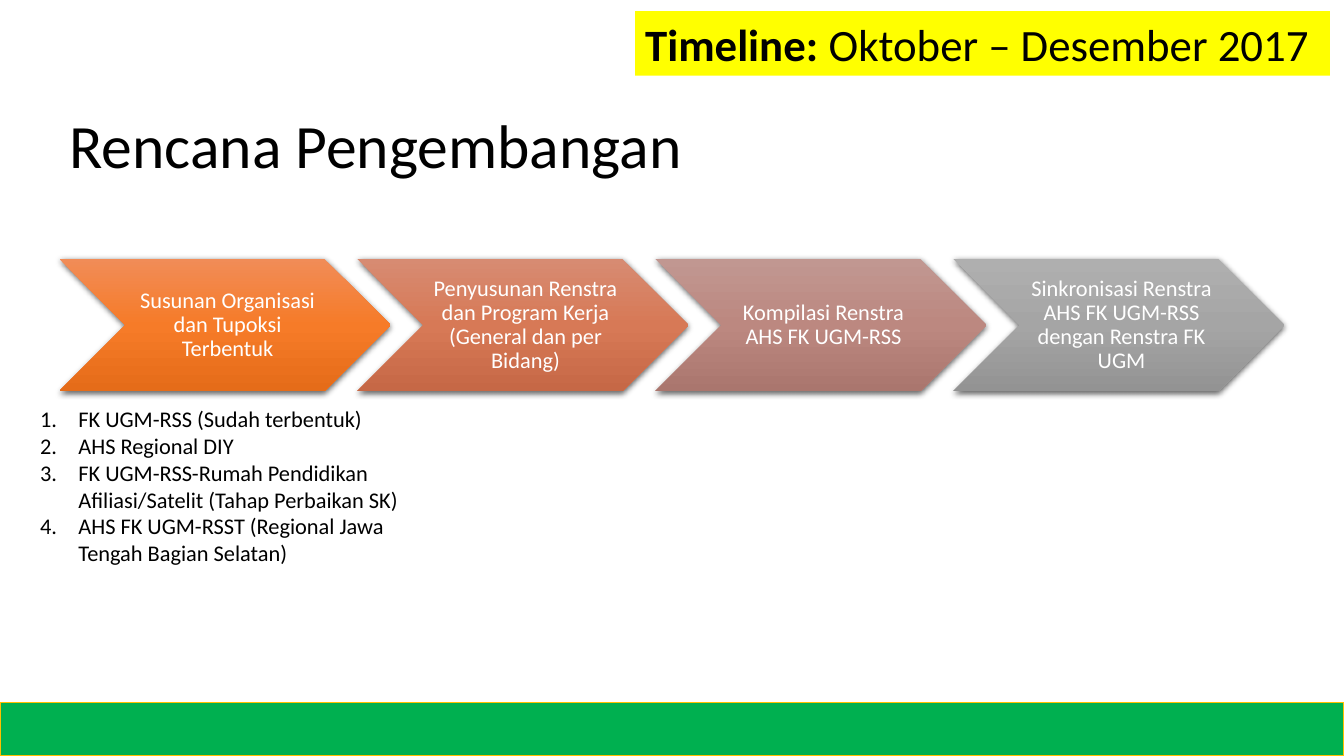
from lxml.etree import SubElement
from pptx import Presentation
from pptx.dml.color import RGBColor
from pptx.enum.shapes import MSO_SHAPE
from pptx.enum.text import MSO_ANCHOR, PP_ALIGN
from pptx.oxml.ns import qn
from pptx.util import Inches, Pt

COLORS = {
    "text": "000000",
    "step_text": "FFFFFF",
    "timeline": "FFFF00",
    "footer": "00B050",
    "footer_line": "FFC000",
    "shadow": "000000",
    "organisasi": ("F18C57", "F67B28", "E56C19"),
    "penyusunan": ("D78B72", "D77956", "C66846"),
    "kompilasi": ("C19791", "BC8880", "AA766E"),
    "sinkronisasi": ("AFAFAF", "A5A5A5", "939393"),
}
STEPS = [
    ("organisasi", "Susunan Organisasi dan Tupoksi Terbentuk"),
    ("penyusunan", "Penyusunan Renstra dan Program Kerja (General dan per Bidang)"),
    ("kompilasi", "Kompilasi Renstra AHS FK UGM-RSS"),
    ("sinkronisasi", "Sinkronisasi Renstra AHS FK UGM-RSS dengan Renstra FK UGM"),
]
ORGANISATIONS = [
    "FK UGM-RSS (Sudah terbentuk)",
    "AHS Regional DIY",
    "FK UGM-RSS-Rumah Pendidikan Afiliasi/Satelit (Tahap Perbaikan SK)",
    "AHS FK UGM-RSST (Regional Jawa Tengah Bagian Selatan)",
]


def rgb(name):
    return RGBColor.from_string(COLORS[name])


def write(paragraph, text, size=16, color="text", bold=False,
          align=PP_ALIGN.LEFT, line_spacing=None):
    paragraph.alignment = align
    paragraph.line_spacing = line_spacing
    run = paragraph.add_run()
    run.text = text
    run.font.name = "Calibri"
    run.font.size = Pt(size)
    run.font.bold = bold
    run.font.color.rgb = rgb(color)


def text_area(slide, box, anchor=MSO_ANCHOR.TOP):
    frame = slide.shapes.add_textbox(*map(Inches, box)).text_frame
    frame.word_wrap = True
    frame.vertical_anchor = anchor
    return frame


def panel(slide, box, fill, line=None):
    bar = slide.shapes.add_shape(MSO_SHAPE.RECTANGLE, *map(Inches, box))
    bar.shadow.inherit = False
    bar.fill.solid()
    bar.fill.fore_color.rgb = rgb(fill)
    if line:
        bar.line.color.rgb = rgb(line)
        bar.line.width = Pt(1)
    else:
        bar.line.fill.background()
    return bar


def shade(chevron, stops):
    chevron.fill.gradient()
    chevron.fill.gradient_angle = 270
    stop_list = chevron._element.spPr.find(".//" + qn("a:gsLst"))
    for old_stop in list(stop_list):
        stop_list.remove(old_stop)
    for index, color in enumerate(stops):
        stop = SubElement(stop_list, qn("a:gs"), pos=str(index * 50000))
        SubElement(stop, qn("a:srgbClr"), val=color)


def cast_shadow(chevron):
    chevron.shadow.inherit = False
    effects = chevron._element.spPr.find(qn("a:effectLst"))
    shadow = SubElement(effects, qn("a:outerShdw"), blurRad=str(Pt(4.5)),
                        dist=str(Pt(1.5)), dir="5400000", algn="ctr", rotWithShape="0")
    color = SubElement(shadow, qn("a:srgbClr"), val=COLORS["shadow"])
    SubElement(color, qn("a:alpha"), val="63000")


def add_title(slide, box):
    title = text_area(slide, box, MSO_ANCHOR.MIDDLE)
    write(title.paragraphs[0], "Rencana Pengembangan", size=44, line_spacing=0.9)


def add_timeline(slide, box):
    timeline = panel(slide, box, "timeline").text_frame
    timeline.word_wrap = True
    write(timeline.paragraphs[0], "Timeline: ", size=32, bold=True)
    write(timeline.paragraphs[0], "Oktober – Desember 2017", size=32)


def add_steps(slide, box):
    left, top, width, height = box
    overlap = 0.1
    step_width = width / (len(STEPS) - (len(STEPS) - 1) * overlap)
    pitch = step_width * (1 - overlap)
    for index, (name, text) in enumerate(STEPS):
        chevron = slide.shapes.add_shape(
            MSO_SHAPE.CHEVRON, Inches(left + index * pitch), Inches(top),
            Inches(step_width), Inches(height))
        shade(chevron, COLORS[name])
        chevron.line.fill.background()
        cast_shadow(chevron)
        frame = chevron.text_frame
        frame.word_wrap = True
        frame.vertical_anchor = MSO_ANCHOR.MIDDLE
        frame.margin_left = Inches(0.07)
        frame.margin_top = frame.margin_right = frame.margin_bottom = Inches(0.02)
        write(frame.paragraphs[0], text, color="step_text",
              align=PP_ALIGN.CENTER, line_spacing=0.9)


def add_organisations(slide, box):
    frame = text_area(slide, box)
    indent = Inches(0.38)
    for index, organisation in enumerate(ORGANISATIONS):
        paragraph = frame.add_paragraph() if index else frame.paragraphs[0]
        write(paragraph, organisation)
        properties = paragraph._p.get_or_add_pPr()
        properties.set("marL", str(indent))
        properties.set("indent", str(-indent))
        SubElement(properties, qn("a:buFont"), typeface="+mj-lt")
        SubElement(properties, qn("a:buAutoNum"), type="arabicPeriod")


def main():
    presentation = Presentation()
    presentation.slide_width = Inches(13.33)
    presentation.slide_height = Inches(7.5)
    slide = presentation.slides.add_slide(presentation.slide_layouts[6])
    add_title(slide, (0.59, 0.75, 11.5, 1.45))
    add_steps(slide, (0.59, 2.57, 12.15, 1.31))
    add_timeline(slide, (6.3, 0.11, 6.89, 0.64))
    panel(slide, (0, 6.97, 13.33, 0.53), "footer", line="footer_line")
    add_organisations(slide, (0.3, 3.97, 3.76, 1.72))
    presentation.save("out.pptx")


if __name__ == "__main__":
    main()
